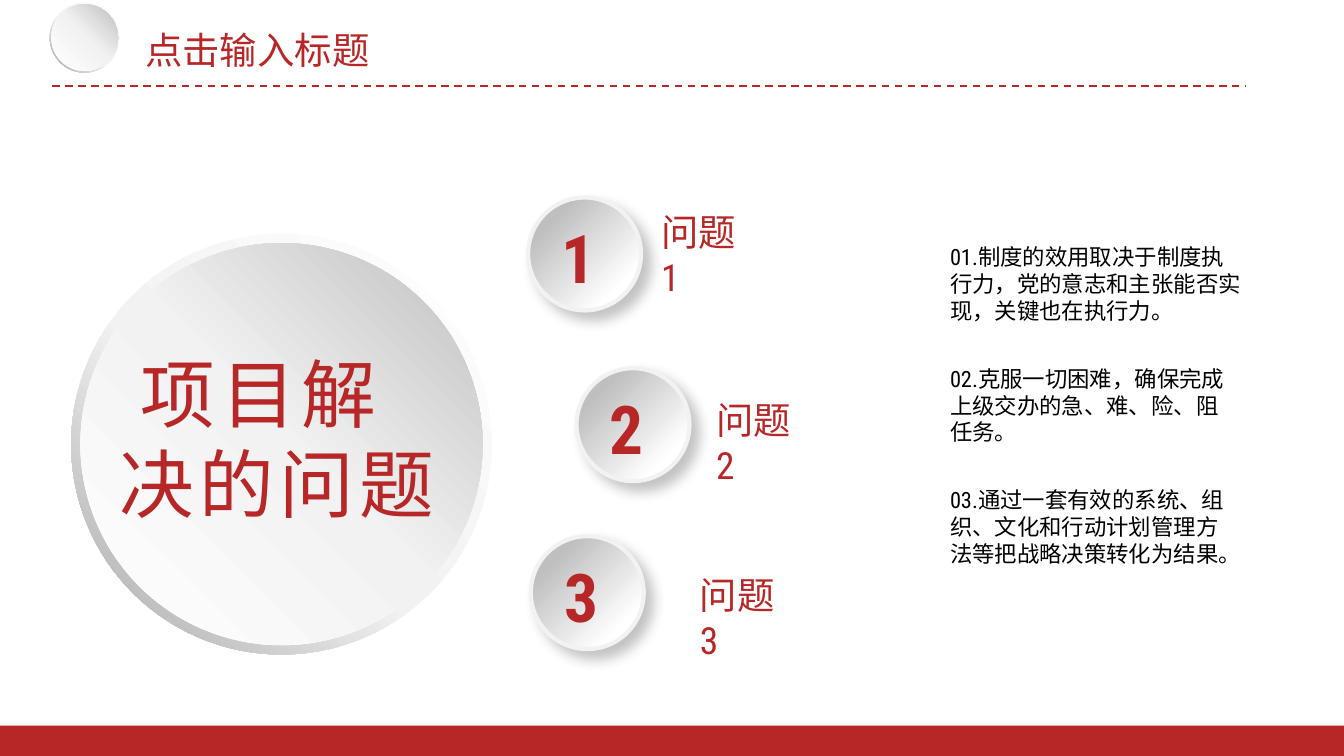
from dataclasses import dataclass

from lxml.etree import SubElement
from pptx import Presentation
from pptx.dml.color import RGBColor
from pptx.enum.dml import MSO_LINE_DASH_STYLE as Dash
from pptx.enum.shapes import MSO_CONNECTOR as Connector, MSO_SHAPE as Shape
from pptx.enum.text import MSO_ANCHOR as Anchor, MSO_AUTO_SIZE as AutoSize, PP_ALIGN as Align
from pptx.oxml.ns import qn
from pptx.util import Inches, Pt


@dataclass(frozen=True)
class Theme:
    font: str = "Roboto Condensed"
    red: str = "B72727"
    black: str = "000000"
    rim: str = "F2F2F2"
    ring: tuple = ((0, "FFFFFF"), (55, "F2F2F2"), (100, "A6A6A6"))
    disc: tuple = ((0, "FFFFFF"), (51, "F2F2F2"), (100, "BFBFBF"))
    button: tuple = ((20, "BFBFBF"), (80, "FFFFFF"), (100, "FFFFFF"))
    body_size: int = 12
    title_size: int = 20
    number_size: int = 36
    topic_size: int = 40


THEME = Theme()


def color(value):
    return RGBColor.from_string(value)


def add_shape(slide, kind, left, top, width, height):
    shape = slide.shapes.add_shape(kind, Inches(left), Inches(top), Inches(width), Inches(height))
    shape.shadow.inherit = False
    shape.line.fill.background()
    return shape


def fill_gradient(shape, stops, angle):
    shape.fill.gradient()
    shape.fill.gradient_angle = 360 - angle
    stop_list = shape.element.spPr.find(qn("a:gradFill")).find(qn("a:gsLst"))
    stop_list.clear()
    for position, value in stops:
        stop = SubElement(stop_list, qn("a:gs"), pos=str(position * 1000))
        SubElement(stop, qn("a:srgbClr"), val=value)


def add_drop_shadow(shape):
    effects = shape.element.spPr.find(qn("a:effectLst"))
    shadow = SubElement(effects, qn("a:outerShdw"), blurRad=str(Pt(7)), dist=str(Pt(5.9)),
                        dir=str(45 * 60000), algn="tl", rotWithShape="0")
    black = SubElement(shadow, qn("a:srgbClr"), val=THEME.black)
    SubElement(black, qn("a:alpha"), val="23000")


def format_text(text_frame, size, value, bold=False):
    for paragraph in text_frame.paragraphs:
        paragraph.alignment = Align.LEFT
        for run in paragraph.runs:
            run.font.name = THEME.font
            run.font.size = Pt(size)
            run.font.bold = bold
            run.font.color.rgb = color(value)


def add_text(slide, text, box, size, value, bold=False, wrap=False):
    shape = slide.shapes.add_textbox(*map(Inches, box))
    text_frame = shape.text_frame
    text_frame.word_wrap = wrap
    text_frame.auto_size = AutoSize.SHAPE_TO_FIT_TEXT
    text_frame.text = text
    format_text(text_frame, size, value, bold)
    return text_frame


def add_ringed_disc(slide, left, top, size):
    ring = add_shape(slide, Shape.DONUT, left, top, size, size)
    ring.adjustments[0] = 0.05
    fill_gradient(ring, THEME.ring, 135)
    inset = size * 0.022
    disc = add_shape(slide, Shape.OVAL, left + inset, top + inset,
                     size - 2 * inset, size - 2 * inset)
    fill_gradient(disc, THEME.disc, 315)


def add_header(slide, left, top, width):
    rule_top = Inches(top + 0.62)
    rule = slide.shapes.add_connector(Connector.STRAIGHT, Inches(left + 0.02), rule_top,
                                      Inches(left + width), rule_top)
    rule.line.color.rgb = color(THEME.red)
    rule.line.width = Pt(1)
    rule.line.dash_style = Dash.DASH
    SubElement(rule.element.spPr, qn("a:effectLst"))
    add_ringed_disc(slide, left, top, 0.52)

    heading = slide.placeholders[1]
    heading.left, heading.top = Inches(left + 0.61), Inches(top + 0.12)
    heading.width, heading.height = Inches(2.75), Inches(0.45)
    text_frame = heading.text_frame
    text_frame.text = "点击输入标题"
    text_frame.auto_size = AutoSize.NONE
    text_frame.vertical_anchor = Anchor.MIDDLE
    text_frame.paragraphs[0].space_before = Pt(0)
    format_text(text_frame, THEME.title_size, THEME.red)


def add_footer(slide, top, width, height):
    bar = add_shape(slide, Shape.RECTANGLE, 0, top, width, height)
    bar.fill.solid()
    bar.fill.fore_color.rgb = color(THEME.red)


def add_topic(slide, left, top, size):
    add_ringed_disc(slide, left, top, size)
    text_frame = add_text(slide, "项目解\n决的问题", (left + 0.26, top + 0.8, 2.61, 1.45),
                          THEME.topic_size, THEME.red)
    text_frame.paragraphs[0]._p.get_or_add_pPr().set("marL", str(Inches(0.16)))
    for paragraph in text_frame.paragraphs:
        for run in paragraph.runs:
            run.font._element.set("spc", "300")


def add_problem(slide, number, left, top, label_left, label_top):
    button = add_shape(slide, Shape.OVAL, left, top, 0.84, 0.84)
    fill_gradient(button, THEME.button, 45)
    button.line.color.rgb = color(THEME.rim)
    button.line.width = Pt(2.25)
    add_drop_shadow(button)
    add_text(slide, str(number), (left + 0.15, top + 0.09, 0.42, 0.71),
             THEME.number_size, THEME.red, bold=True, wrap=True)
    add_text(slide, f"问题{number}", (label_left, label_top, 0.82, 0.44),
             THEME.title_size, THEME.red, wrap=True)


def add_explanations(slide, left, top, width, pitch):
    explanations = (
        "01.制度的效用取决于制度执\n行力，党的意志和主张能否实\n现，关键也在执行力。",
        "02.克服一切困难，确保完成\n上级交办的急、难、险、阻\n任务。",
        "03.通过一套有效的系统、组\n织、文化和行动计划管理方\n法等把战略决策转化为结果。",
    )
    for index, text in enumerate(explanations):
        add_text(slide, text, (left, top + index * pitch, width, 0.71),
                 THEME.body_size, THEME.black)


def main():
    presentation = Presentation()
    presentation.slide_width, presentation.slide_height = Inches(10), Pt(405)
    slide = presentation.slides.add_slide(presentation.slide_layouts[2])
    title = slide.shapes.title.element
    title.getparent().remove(title)
    add_header(slide, 0.37, 0.02, 8.9)
    add_footer(slide, 5.4, 10, 0.24)
    add_topic(slide, 0.53, 1.74, 3.13)
    problems = ((3.93, 1.47, 4.82, 1.51), (4.29, 2.74, 5.23, 2.91), (3.95, 3.99, 5.11, 4.21))
    for number, place in enumerate(problems, 1):
        add_problem(slide, number, *place)
    add_explanations(slide, 6.97, 1.76, 2.39, 0.905)
    presentation.save("out.pptx")


if __name__ == "__main__":
    main()
